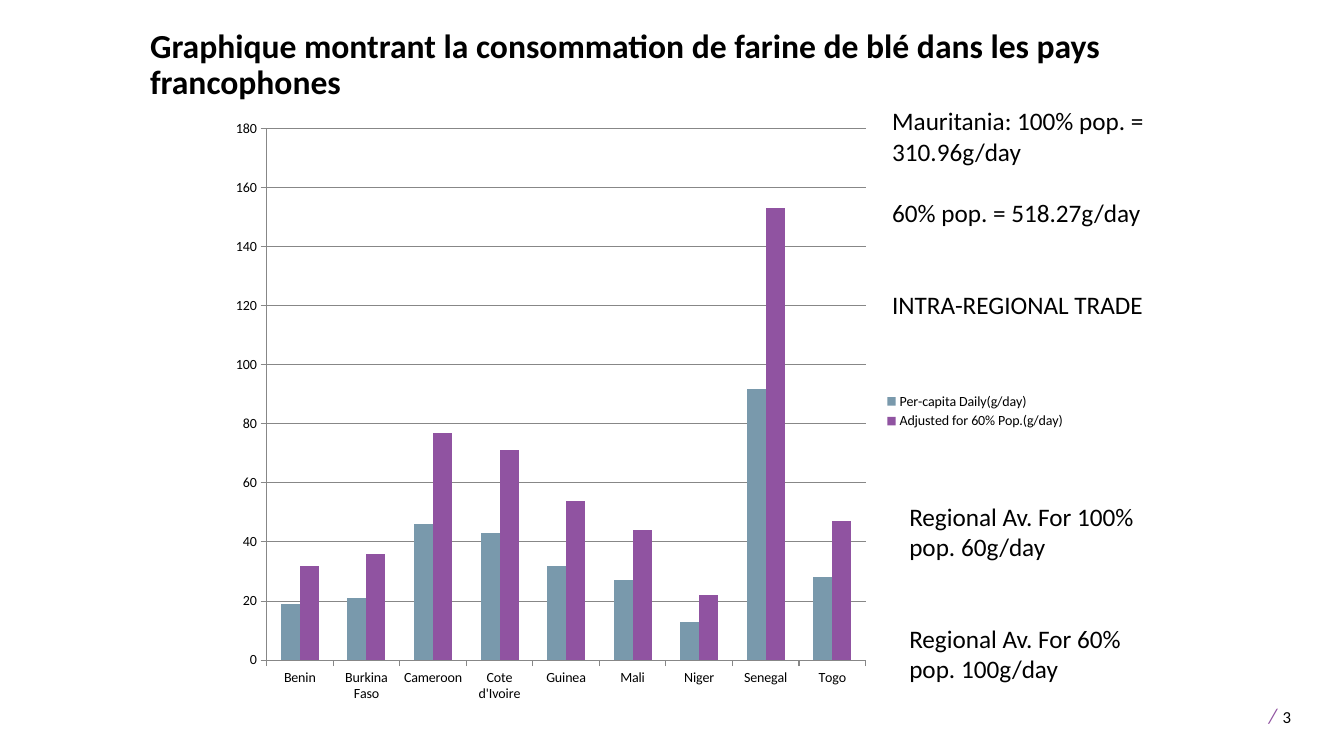
from dataclasses import dataclass

from pptx import Presentation
from pptx.chart.data import CategoryChartData
from pptx.dml.color import RGBColor
from pptx.enum.chart import XL_CHART_TYPE, XL_LEGEND_POSITION, XL_TICK_MARK
from pptx.enum.text import MSO_ANCHOR
from pptx.slide import Slide
from pptx.util import Inches, Pt

FONT = "Calibri"
BLACK, GREY, BLUE, PURPLE = "000000", "878787", "7999AC", "9053A1"
LINE = 22  # height in points of one 18 pt line


@dataclass
class Run:
    text: str
    size: float = 18
    color: str = BLACK
    bold: bool = False
    italic: bool = False


@dataclass
class Para:
    runs: list[Run]
    before: float = 0
    spacing: float = 1.0


@dataclass
class Box:
    left: float
    top: float
    width: float
    height: float
    paras: list[Para]
    anchor: MSO_ANCHOR = MSO_ANCHOR.TOP


@dataclass
class Series:
    name: str
    color: str
    values: list[int]


BOXES = [
    Box(1.39, 0.26, 11.12, 0.78, [
        Para([Run("Graphique montrant la consommation de farine de blé "
                  "dans les pays francophones", 24, bold=True)], spacing=0.9),
    ], MSO_ANCHOR.MIDDLE),
    Box(8.75, 1, 2.92, 2.22, [
        Para([Run("Mauritania: 100% pop. = 310.96g/day")]),
        Para([Run("60% pop. = 518.27g/day")], LINE),
        Para([Run("INTRA-REGIONAL TRADE")], 2 * LINE),
    ]),
    Box(8.92, 4.92, 2.5, 1.92, [
        Para([Run("Regional Av. For 100% pop. 60g/day")]),
        Para([Run("Regional Av. For 60% pop. 100g/day")], 2 * LINE),
    ]),
    Box(12.43, 6.88, 0.87, 0.4, [
        Para([Run(" "), Run("/", 15, PURPLE, italic=True), Run(" "), Run("3", 12)]),
    ]),
]

LANDS = ["Benin", "Burkina Faso", "Cameroon", "Cote d'Ivoire", "Guinea",
         "Mali", "Niger", "Senegal", "Togo"]
SERIES = [
    Series("Per-capita Daily(g/day)", BLUE, [19, 21, 46, 43, 32, 27, 13, 92, 28]),
    Series("Adjusted for 60% Pop.(g/day)", PURPLE, [32, 36, 77, 71, 54, 44, 22, 153, 47]),
]


def rgb(code: str) -> RGBColor:
    return RGBColor.from_string(code)


def add_box(slide: Slide, box: Box) -> None:
    frame = slide.shapes.add_textbox(Inches(box.left), Inches(box.top),
                                     Inches(box.width), Inches(box.height)).text_frame
    frame.word_wrap = True
    frame.vertical_anchor = box.anchor
    for i, para in enumerate(box.paras):
        line = frame.add_paragraph() if i else frame.paragraphs[0]
        line.line_spacing = para.spacing
        line.space_before = Pt(para.before)
        for item in para.runs:
            run = line.add_run()
            run.text = item.text
            font = run.font
            font.name, font.size = FONT, Pt(item.size)
            font.bold, font.italic = item.bold, item.italic
            font.color.rgb = rgb(item.color)


def add_bars(slide: Slide) -> None:
    data = CategoryChartData(number_format="0")
    data.categories = LANDS
    for item in SERIES:
        data.add_series(item.name, item.values)
    chart = slide.shapes.add_chart(XL_CHART_TYPE.COLUMN_CLUSTERED, Inches(2.17), Inches(1.08),
                                   Inches(8.5), Inches(6), data).chart
    chart.has_title = False
    chart.font.name, chart.font.size = FONT, Pt(10)
    chart.font.color.rgb = rgb(BLACK)
    chart.has_legend = True
    chart.legend.position = XL_LEGEND_POSITION.RIGHT
    chart.legend.include_in_layout = False

    plot = chart.plots[0]
    plot.gap_width, plot.overlap = 150, 0
    plot.vary_by_categories = False
    for bars, item in zip(plot.series, SERIES):
        bars.format.fill.solid()
        bars.format.fill.fore_color.rgb = rgb(item.color)

    scale = chart.value_axis
    scale.minimum_scale, scale.maximum_scale, scale.major_unit = 0, 180, 20
    scale.has_major_gridlines = True
    for axis in (chart.category_axis, scale):
        axis.major_tick_mark = XL_TICK_MARK.OUTSIDE
        axis.minor_tick_mark = XL_TICK_MARK.NONE
    for part in (chart.category_axis, scale, scale.major_gridlines):
        part.format.line.color.rgb = rgb(GREY)
        part.format.line.width = Pt(0.75)


def main() -> None:
    deck = Presentation()
    deck.slide_width, deck.slide_height = Inches(13.33), Inches(7.5)
    slide = deck.slides.add_slide(deck.slide_layouts[6])
    add_bars(slide)
    for box in BOXES:
        add_box(slide, box)
    deck.save("out.pptx")


if __name__ == "__main__":
    main()
